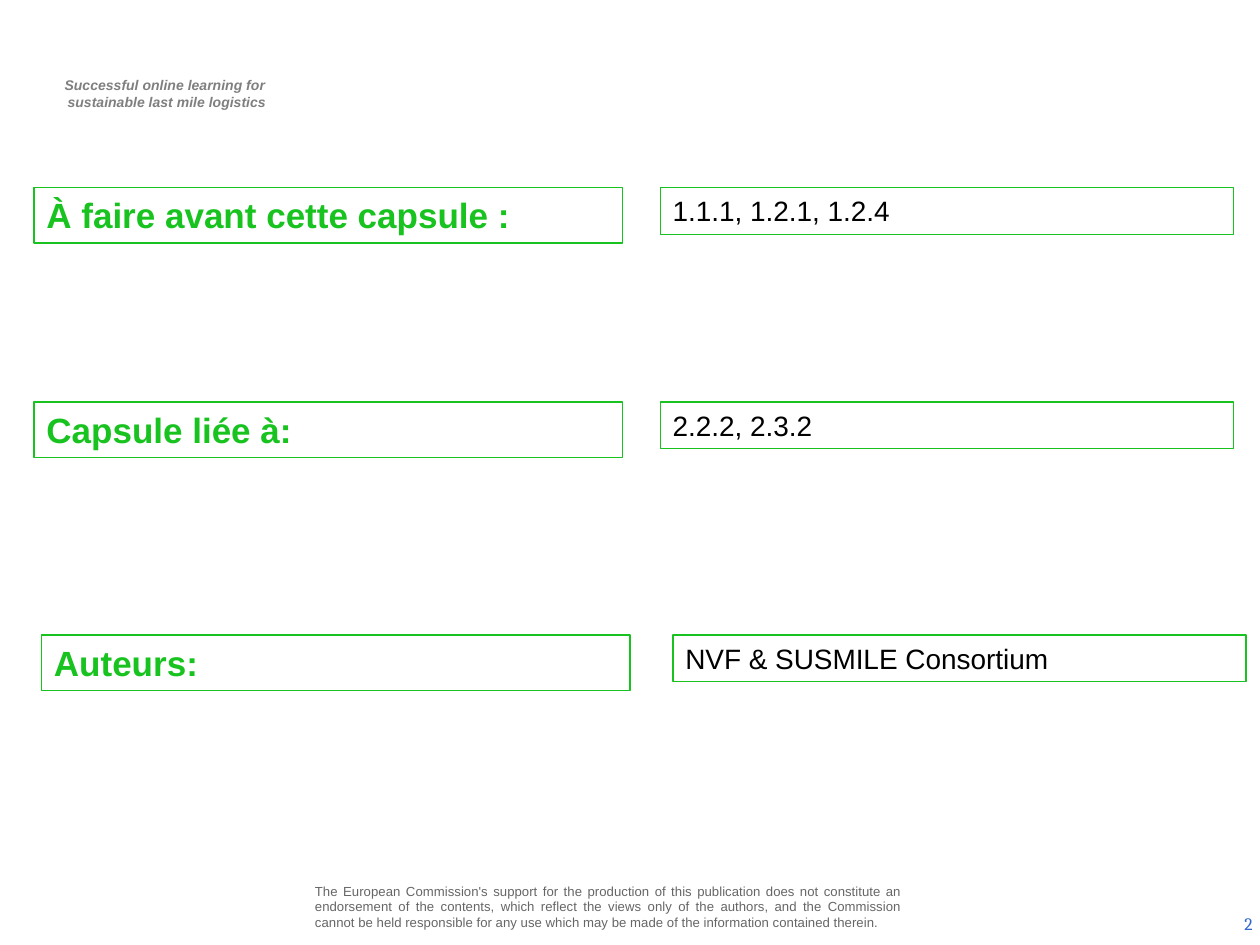
"""Build the capsule overview slide: prerequisites, linked capsules and authors."""
from pptx import Presentation, util as u
from pptx.dml.color import RGBColor
from pptx.enum import shapes, text

GREEN = RGBColor(0x18, 0xC3, 0x20)
WHITE = RGBColor(0xFF, 0xFF, 0xFF)
BLACK = RGBColor(0x00, 0x00, 0x00)
GREY = RGBColor(0x7F, 0x7F, 0x7F)
DARK_GREY = RGBColor(0x66, 0x66, 0x66)
BLUE = RGBColor(0x33, 0x66, 0xCC)
ALIGN = text.PP_ALIGN
ANCHOR = text.MSO_ANCHOR

deck = Presentation()
deck.slide_width, deck.slide_height = u.Inches(10), u.Inches(7.5)
page = deck.slides.add_slide(deck.slide_layouts[6])
COLUMN = deck.slide_width / 100
ROW = deck.slide_height / 75


def place(left, top, width, height):
    """Turn grid columns and rows into slide lengths."""
    return [round(left * COLUMN), round(top * ROW), round(width * COLUMN), round(height * ROW)]


def write(box, lines, size, color, align=ALIGN.LEFT, anchor=ANCHOR.TOP, font="Arial", bold=False, italic=False):
    """Fill a box with one paragraph per line."""
    frame = box.text_frame
    frame.word_wrap = True
    frame.vertical_anchor = anchor
    for index, line in enumerate(lines):
        para = frame.add_paragraph() if index else frame.paragraphs[0]
        para.alignment = align
        span = para.add_run()
        span.text = line
        span.font.name, span.font.size = font, u.Pt(size)
        span.font.bold, span.font.italic = bold, italic
        span.font.color.rgb = color
    return frame


motto = page.shapes.add_textbox(*place(2.9, 5.6, 20.3, 3.7))
motto_frame = write(motto, ["Successful online learning for ", "sustainable last mile logistics"],
                    8, GREY, ALIGN.CENTER, bold=True, italic=True)
for para in motto_frame.paragraphs:
    para._p.get_or_add_pPr().set("marL", str(round(0.4 * COLUMN)))

disclaimer = page.shapes.add_textbox(*place(24.6, 69.5, 47.3, 4.9))
disclaimer_frame = write(disclaimer, [
    "The European Commission's support for the production of this publication does not constitute an "
    "endorsement of the contents, which reflect the views only of the authors, and the Commission "
    "cannot be held responsible for any use which may be made of the information contained therein."],
    7.5, DARK_GREY, ALIGN.JUSTIFY, ANCHOR.MIDDLE)
for side in ("left", "right", "top", "bottom"):
    setattr(disclaimer_frame, f"margin_{side}", round(0.4 * COLUMN))

number = page.shapes.add_textbox(*place(77.1, 71.3, 23.3, 4))
write(number, ["2"], 10, BLUE, ALIGN.RIGHT, ANCHOR.MIDDLE, font="Cambria")

entries = [
    (14.9, 2.7, 52.4, "À faire avant cette capsule :", "1.1.1, 1.2.1, 1.2.4"),
    (31.9, 2.7, 52.4, "Capsule liée à:", "2.2.2, 2.3.2"),
    (50.4, 3.3, 53.4, "Auteurs:", "NVF & SUSMILE Consortium"),
]
for top, label_left, value_left, label, value in entries:
    for left, width, height, words, size, color, bold in (
        (label_left, 46.7, 4.4, label, 20, GREEN, True),
        (value_left, 45.5, 3.7, value, 16, BLACK, False),
    ):
        box = page.shapes.add_shape(shapes.MSO_SHAPE.RECTANGLE, *place(left, top, width, height))
        box.shadow.inherit = False
        box.fill.solid()
        box.fill.fore_color.rgb = WHITE
        box.line.color.rgb = GREEN
        box.line.width = u.Pt(0.75)
        write(box, [words], size, color, bold=bold)

deck.save("out.pptx")
